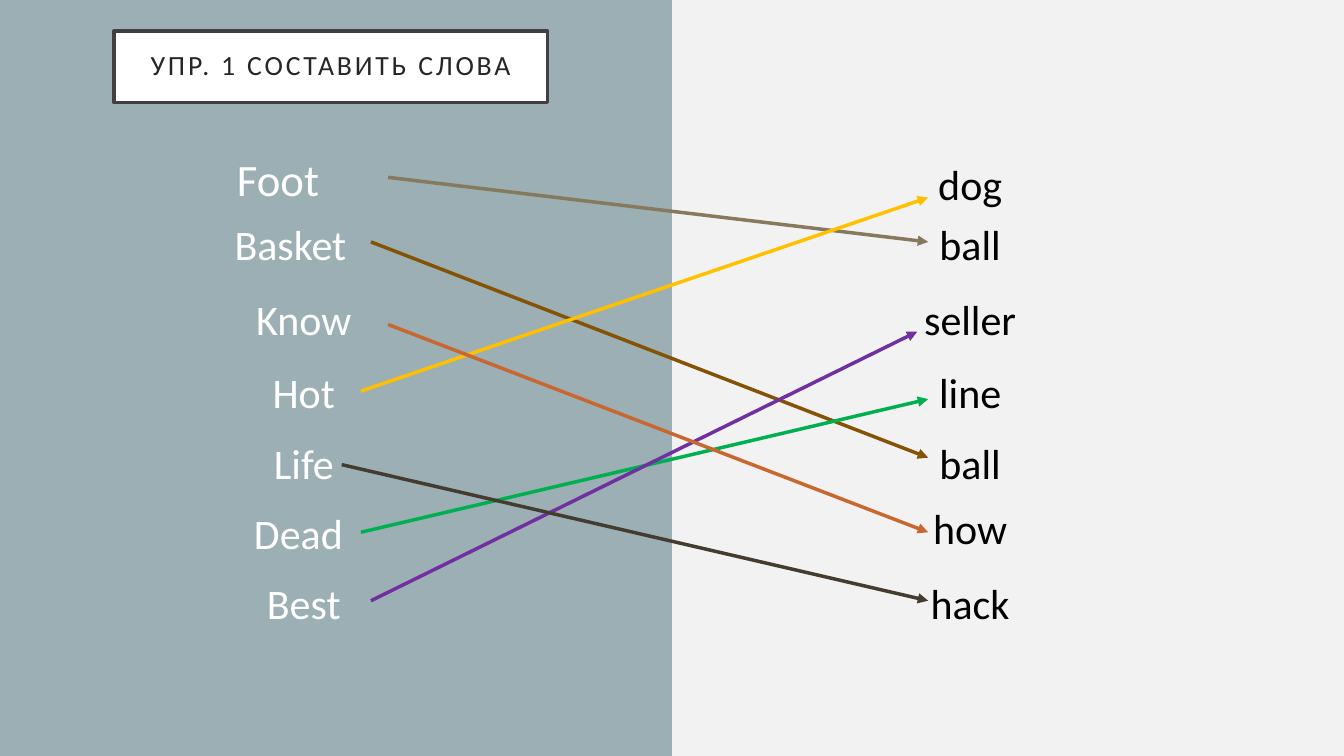
from lxml import etree
from pptx import Presentation
from pptx.dml.color import RGBColor
from pptx.enum.shapes import MSO_CONNECTOR as CONN, MSO_SHAPE as SHAPE
from pptx.enum.text import MSO_ANCHOR as ANCHOR, MSO_AUTO_SIZE as FIT, PP_ALIGN as ALIGN
from pptx.oxml.ns import qn
from pptx.util import Pt

COLORS = {
    "background": "F2F2F2", "panel": "9BAFB5", "white": "FFFFFF", "black": "000000",
    "title": "262626", "frame": "404040",
    "foot": "87795D", "basket": "845305", "dead": "00B050", "best": "7030A0",
    "hot": "FFC000", "life": "443C2E", "know": "C96731",
}
FONT = "Calibri"
WORD_HEIGHT = 43.9
RIGHT_CENTER = 693

# word, centre x, top, box width
LEFT_WORDS = [
    ("Basket", 207.5, 152.6, 134.6),
    ("Know", 217, 205.9, 187.2),
    ("Hot", 217, 258.5, 211),
    ("Life", 217, 308.9, 241.2),
    ("Dead", 213.2, 359.3, 100.8),
    ("Best", 217, 409, 125.3),
]
# word, top, box width
RIGHT_WORDS = [
    ("dog", 109.4, 123.8),
    ("ball", 152.6, 202.3),
    ("seller", 205.9, 102.2),
    ("line", 258.5, 121.7),
    ("ball", 308.9, 170.6),
    ("how", 355.7, 159.1),
    ("hack", 409, 134.6),
]
# colour, start x and y, end x and y
ARROWS = [
    ("foot", 277.2, 126.7, 663, 172.8),
    ("basket", 265, 172.8, 663, 326.9),
    ("dead", 257.8, 380.2, 663, 285.1),
    ("best", 265, 429.1, 655.2, 236.9),
    ("hot", 257.8, 279.4, 663, 141.1),
    ("life", 244.1, 331.9, 663, 429.1),
    ("know", 277.2, 231.8, 663, 380.2),
]


def rgb(name):
    return RGBColor.from_string(COLORS[name])


def place(sp, x, y, w, h):
    sp.left, sp.top, sp.width, sp.height = Pt(x), Pt(y), Pt(w), Pt(h)


def write(sp, text, size, color):
    """Set one centred line of text and return its paragraph."""
    tf = sp.text_frame
    tf.word_wrap = True
    tf.auto_size = FIT.NONE
    tf.text = text
    p = tf.paragraphs[0]
    p.alignment = ALIGN.CENTER
    font = p.runs[0].font
    font.name, font.size = FONT, Pt(size)
    font.color.rgb = rgb(color)
    return p


def add_panel(s):
    sp = s.shapes.add_shape(SHAPE.RECTANGLE, 0, 0, Pt(480), Pt(540))
    sp.shadow.inherit = False
    sp.fill.solid()
    sp.fill.fore_color.rgb = rgb("panel")
    sp.line.fill.background()
    # Behind the placeholders
    sp.element.getparent().insert(2, sp.element)


def format_title(sp):
    place(sp, 81.4, 22.3, 309.6, 51.1)
    sp.fill.solid()
    sp.fill.fore_color.rgb = rgb("white")
    sp.line.color.rgb = rgb("frame")
    sp.line.width = Pt(2.5)
    p = write(sp, "УПР. 1 СОСТАВИТЬ СЛОВА", 19.8, "title")
    p.line_spacing = 0.9
    p.runs[0].font._element.set("spc", "200")
    tf = sp.text_frame
    tf.vertical_anchor = ANCHOR.MIDDLE
    tf.margin_left = tf.margin_right = tf.margin_top = tf.margin_bottom = Pt(14.4)


def format_first_word(sp):
    place(sp, 94.6, 105.1, 208, 49)
    p = write(sp, "Foot", 32, "white")
    p.space_before = Pt(10)
    ppr = p._p.get_or_add_pPr()
    ppr.set("marL", "0")
    ppr.set("indent", "0")
    etree.SubElement(ppr, qn("a:buNone"))


def add_word(s, text, center, top, width, color):
    sp = s.shapes.add_textbox(Pt(center - width / 2), Pt(top), Pt(width), Pt(WORD_HEIGHT))
    write(sp, text, 30, color)
    sp.text_frame.auto_size = FIT.SHAPE_TO_FIT_TEXT


def add_arrow(s, color, *ends):
    c = s.shapes.add_connector(CONN.STRAIGHT, *map(Pt, ends))
    c.line.color.rgb = rgb(color)
    c.line.width = Pt(2.5)
    etree.SubElement(c.line._get_or_add_ln(), qn("a:tailEnd"), type="triangle")
    etree.SubElement(c.element.spPr, qn("a:effectLst"))


def main():
    prs = Presentation()
    prs.slide_width, prs.slide_height = Pt(960), Pt(540)
    s = prs.slides.add_slide(prs.slide_layouts[1])
    s.background.fill.solid()
    s.background.fill.fore_color.rgb = rgb("background")
    add_panel(s)
    format_title(s.shapes.title)
    format_first_word(s.placeholders[1])
    for text, top, width in RIGHT_WORDS:
        add_word(s, text, RIGHT_CENTER, top, width, "black")
    for text, center, top, width in LEFT_WORDS:
        add_word(s, text, center, top, width, "white")
    for arrow in ARROWS:
        add_arrow(s, *arrow)
    prs.save("out.pptx")


if __name__ == "__main__":
    main()
